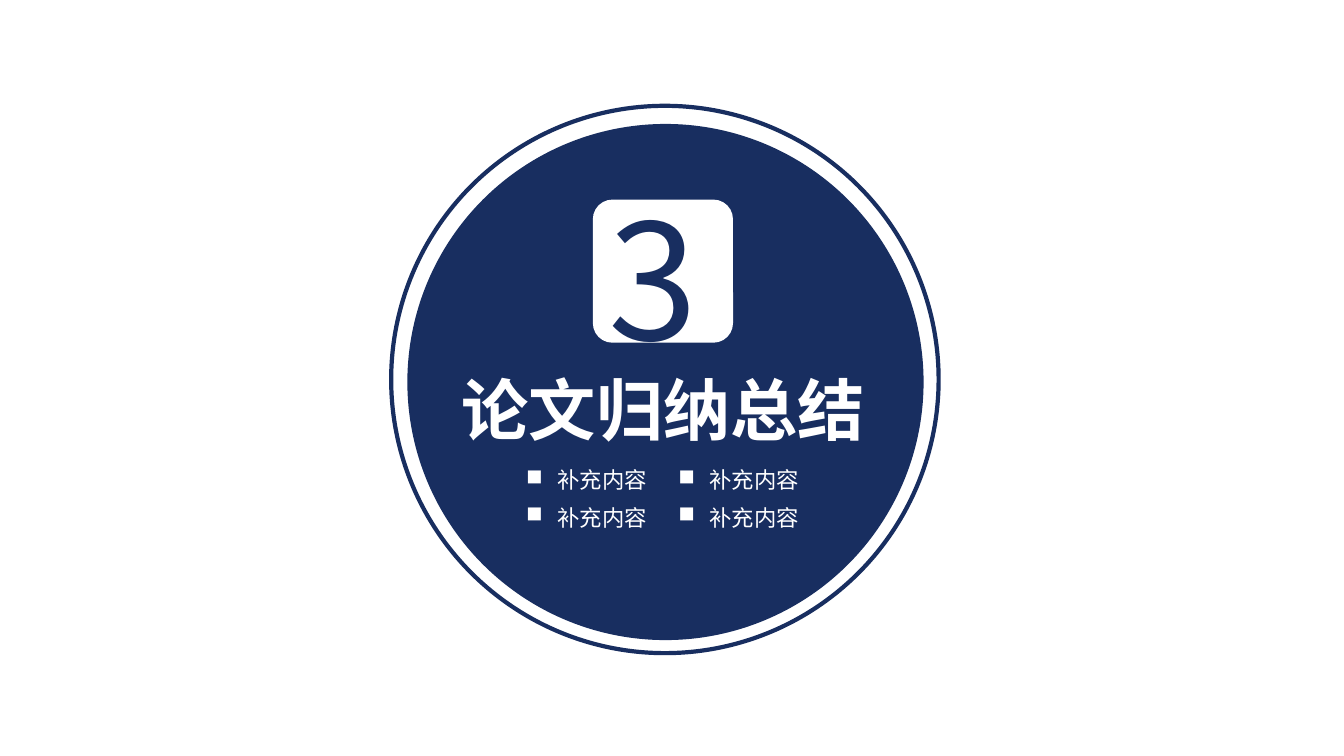
from dataclasses import dataclass

from lxml.etree import SubElement
from pptx import Presentation
from pptx.dml.color import RGBColor
from pptx.enum.shapes import MSO_SHAPE as Shape
from pptx.enum.text import MSO_ANCHOR as Anchor, MSO_AUTO_SIZE as AutoSize, PP_ALIGN as Align
from pptx.oxml.ns import qn
from pptx.util import Emu, Pt

PX = 9144


@dataclass(frozen=True)
class Theme:
    navy: RGBColor = RGBColor(0x18, 0x2E, 0x60)
    white: RGBColor = RGBColor(0xFF, 0xFF, 0xFF)
    font: str = "Noto Sans CJK SC"
    title: int = 48
    number: int = 115
    body: int = 16
    ring: int = 3


@dataclass(frozen=True)
class Box:
    x: int
    y: int
    w: int
    h: int

    def emu(self) -> tuple[Emu, ...]:
        return tuple(px(n) for n in (self.x, self.y, self.w, self.h))


@dataclass(frozen=True)
class Panel:
    kind: Shape
    box: Box
    fill: RGBColor | None = None
    line: RGBColor | None = None
    radius: float | None = None


@dataclass(frozen=True)
class Label:
    text: str
    box: Box
    size: int
    color: RGBColor
    bold: bool = False
    wrap: bool = True
    bullet: str = ""


THEME = Theme()
BULLET_INDENT = 31

PANELS = [
    Panel(Shape.OVAL, Box(388, 105, 543, 543), line=THEME.navy),
    Panel(Shape.OVAL, Box(404, 123, 512, 512), fill=THEME.navy),
    Panel(Shape.ROUNDED_RECTANGLE, Box(588, 198, 139, 142), fill=THEME.white, radius=0.14),
]
TITLE = Label("论文归纳总结", Box(448, 360, 429, 91), THEME.title, THEME.white, bold=True, wrap=False)
NUMBER = Label("3", Box(594, 173, 115, 204), THEME.number, THEME.navy)
TOPICS = [
    Label("补充内容", Box(512 + 151 * col, 458 + 37 * row, 150, 37),
          THEME.body, THEME.white, bullet="■")
    for col in range(2) for row in range(2)
]


def px(n: int) -> Emu:
    return Emu(n * PX)


def set_all(target, values: dict) -> None:
    for name, value in values.items():
        setattr(target, name, value)


def add_panel(s, panel: Panel) -> None:
    sp = s.shapes.add_shape(panel.kind, *panel.box.emu())
    sp.shadow.inherit = False
    if panel.radius is not None:
        sp.adjustments[0] = panel.radius
    if panel.fill is None:
        sp.fill.background()
    else:
        sp.fill.solid()
        sp.fill.fore_color.rgb = panel.fill
    if panel.line is None:
        sp.line.fill.background()
    else:
        sp.line.color.rgb = panel.line
        sp.line.width = Pt(THEME.ring)


def write_label(sp, label: Label) -> None:
    set_all(sp, dict(zip(("left", "top", "width", "height"), label.box.emu())))
    tf = sp.text_frame
    set_all(tf, {"word_wrap": label.wrap, "auto_size": AutoSize.SHAPE_TO_FIT_TEXT,
                 "vertical_anchor": Anchor.TOP})
    p = tf.paragraphs[0]
    p.alignment = Align.LEFT
    if label.bullet:
        ppr = p._p.get_or_add_pPr()
        ppr.set("marL", str(px(BULLET_INDENT)))
        ppr.set("indent", str(-px(BULLET_INDENT)))
        SubElement(ppr, qn("a:buChar"), char=label.bullet)
    r = p.add_run()
    r.text = label.text
    set_all(r.font, {"name": THEME.font, "size": Pt(label.size), "bold": label.bold})
    r.font.color.rgb = label.color
    SubElement(r._r.get_or_add_rPr(), qn("a:ea"), typeface=THEME.font)


def add_label(s, label: Label) -> None:
    write_label(s.shapes.add_textbox(*label.box.emu()), label)


def main() -> None:
    prs = Presentation()
    set_all(prs, {"slide_width": px(1333), "slide_height": px(750)})
    s = prs.slides.add_slide(prs.slide_layouts[5])
    for panel in PANELS:
        add_panel(s, panel)
    title = s.shapes.title
    write_label(title, TITLE)
    s.shapes._spTree.append(title._element)
    for label in [NUMBER, *TOPICS]:
        add_label(s, label)
    prs.save("out.pptx")


if __name__ == "__main__":
    main()
